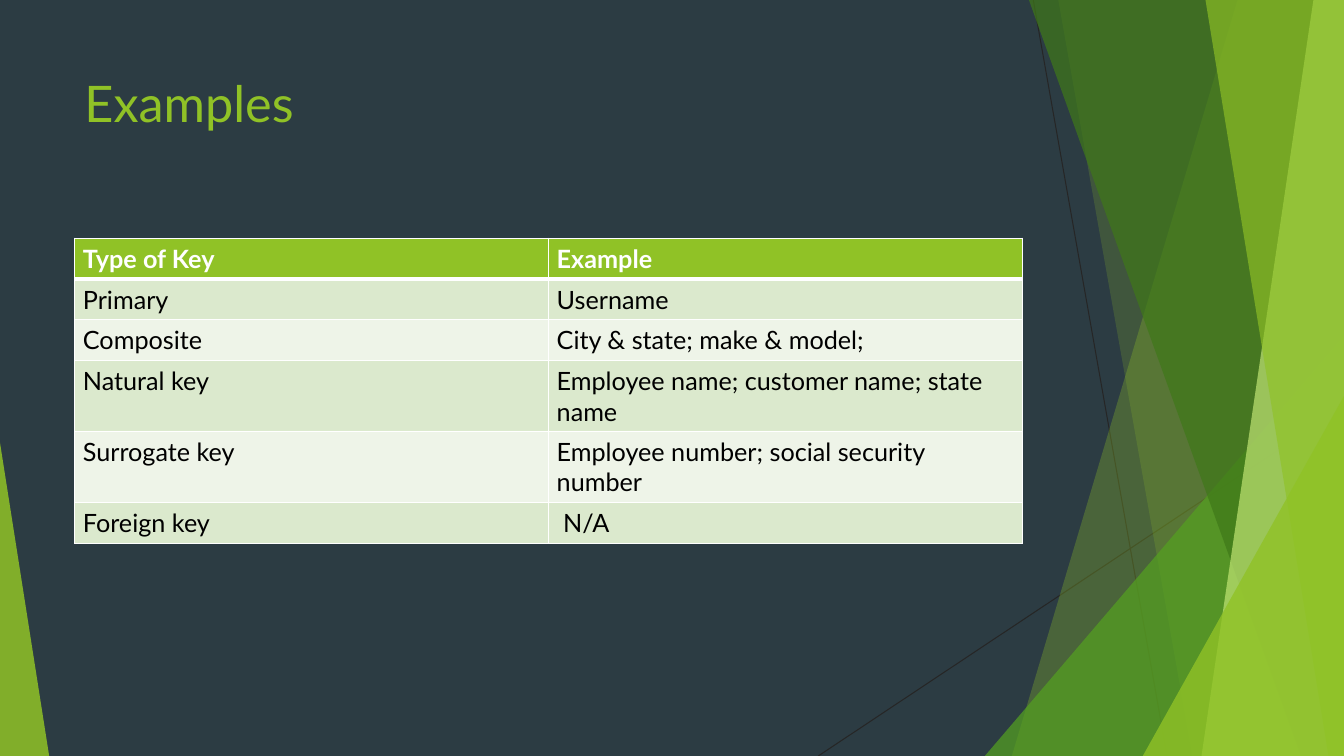
import pptx
import pptx.util
import pptx.dml.color
import pptx.enum.shapes
import pptx.oxml
import pptx.oxml.ns
import lxml.etree

Cm = pptx.util.Cm
RGB = pptx.dml.color.RGBColor
KIND = pptx.enum.shapes.MSO_SHAPE
LINK = pptx.enum.shapes.MSO_CONNECTOR
qn = pptx.oxml.ns.qn

SLATE = RGB(0x2C, 0x3C, 0x43)
LIME = RGB(0x90, 0xC2, 0x26)
GREEN = RGB(0x54, 0xA0, 0x21)
FOREST = RGB(0x3F, 0x78, 0x19)
PALE = RGB(0xC0, 0xE4, 0x74)
DARK = RGB(0x26, 0x26, 0x26)
BLACK = RGB(0, 0, 0)
WHITE = RGB(0xFF, 0xFF, 0xFF)
BANDS = (RGB(0xDB, 0xE9, 0xCD), RGB(0xEE, 0xF4, 0xE8))

WIDE, HIGH = 33.87, 19.05
ROWS = [
    ("Type of Key", "Example"),
    ("Primary", "Username"),
    ("Composite", "City & state; make & model;"),
    ("Natural key", "Employee name; customer name; state name"),
    ("Surrogate key", "Employee number; social security number"),
    ("Foreign key", " N/A"),
]


def write(frame, text, size=18, color=BLACK, bold=False):
    frame.word_wrap = True
    run = frame.paragraphs[0].add_run()
    run.text = text
    run.font.name = "Lato"
    run.font.size = pptx.util.Pt(size)
    run.font.bold = bold
    run.font.color.rgb = color


def paint(shape, color, alpha):
    shape.shadow.inherit = False
    shape.line.fill.background()
    shape.fill.solid()
    shape.fill.fore_color.rgb = color
    tone = shape.element.spPr.find(qn("a:solidFill"))[0]
    lxml.etree.SubElement(tone, qn("a:alpha")).set("val", str(alpha * 1000))


def draw_line(slide, start, end):
    line = slide.shapes.add_connector(LINK.STRAIGHT, *map(Cm, start + end))
    line.line.color.rgb = DARK
    line.line.width = pptx.util.Pt(0.75)
    lxml.etree.SubElement(line.element.spPr, qn("a:effectLst"))


def draw_wing(slide, box, head, foot, color, alpha):
    left, top, width, height = box
    right, base = left + width, top + height
    form = slide.shapes.build_freeform(Cm(left + head), Cm(top), scale=1.0)
    ends = [(right, top), (right, base), (left + foot, base)]
    form.add_line_segments([(Cm(x), Cm(y)) for x, y in ends], close=True)
    paint(form.convert_to_shape(), color, alpha)


def draw_peak(slide, box, tip, color, alpha):
    peak = slide.shapes.add_shape(KIND.ISOSCELES_TRIANGLE, *map(Cm, box))
    peak.adjustments[0] = tip
    paint(peak, color, alpha)


def draw_decor(slide, box):
    left, top, width, height = box
    right, base = left + width, top + height

    def corner(wide, high):
        return (right - wide, base - high, wide, high)

    draw_line(slide, (left + 5.42, top), (left + 8.79, base))
    draw_line(slide, (right, top + 10.24), (left, base))
    draw_wing(slide, box, 10.57, 4.88, LIME, 30)
    draw_wing(slide, box, 6.05, 9.43, LIME, 20)
    draw_peak(slide, corner(9.05, 10.59), 1, GREEN, 72)
    draw_wing(slide, box, 5.31, 12.17, FOREST, 70)
    draw_wing(slide, box, 12.48, 9.66, PALE, 70)
    draw_wing(slide, box, 9.76, 12.86, LIME, 65)
    draw_peak(slide, corner(5.07, 9.07), 1, LIME, 80)


def draw_title(slide, box, text):
    frame = slide.shapes.add_textbox(*map(Cm, box)).text_frame
    write(frame, text, size=36, color=LIME)


def edge(cell, sides):
    props = cell._tc.get_or_add_tcPr()
    for spot, (side, points) in enumerate(sides.items()):
        line = pptx.oxml.parse_xml(
            f'<a:ln{side} {pptx.oxml.ns.nsdecls("a")} w="{points * 12700}">'
            f'<a:solidFill><a:srgbClr val="{WHITE}"/></a:solidFill></a:ln{side}>'
        )
        props.insert(spot, line)


def draw_table(slide, box, rows):
    left, top, width, height = map(Cm, box)
    cols = len(rows[0])
    table = slide.shapes.add_table(len(rows), cols, left, top, width, height).table
    table.horz_banding = False
    table.first_row = False
    for i, row in enumerate(rows):
        for j, text in enumerate(row):
            cell = table.cell(i, j)
            cell.margin_left = cell.margin_right = Cm(0.21)
            cell.margin_top = cell.margin_bottom = Cm(0.13)
            cell.fill.solid()
            cell.fill.fore_color.rgb = BANDS[(i - 1) % 2] if i else LIME
            edge(cell, {"L": 1, "R": 1, "T": 3 if i == 1 else 1, "B": 1 if i else 3})
            write(cell.text_frame, text, color=BLACK if i else WHITE, bold=i == 0)


def main():
    deck = pptx.Presentation()
    deck.slide_width, deck.slide_height = Cm(WIDE), Cm(HIGH)
    slide = deck.slides.add_slide(deck.slide_layouts[6])
    slide.background.fill.solid()
    slide.background.fill.fore_color.rgb = SLATE
    draw_decor(slide, (20.62, 0, WIDE - 20.62, HIGH))
    draw_peak(slide, (0, 11.15, 1.24, HIGH - 11.15), 0, LIME, 85)
    draw_title(slide, (1.88, 1.7, 23.88, 3.66), "Examples")
    draw_table(slide, (1.88, 6, 23.88, 1.03 * len(ROWS)), ROWS)
    deck.save("out.pptx")


if __name__ == "__main__":
    main()
